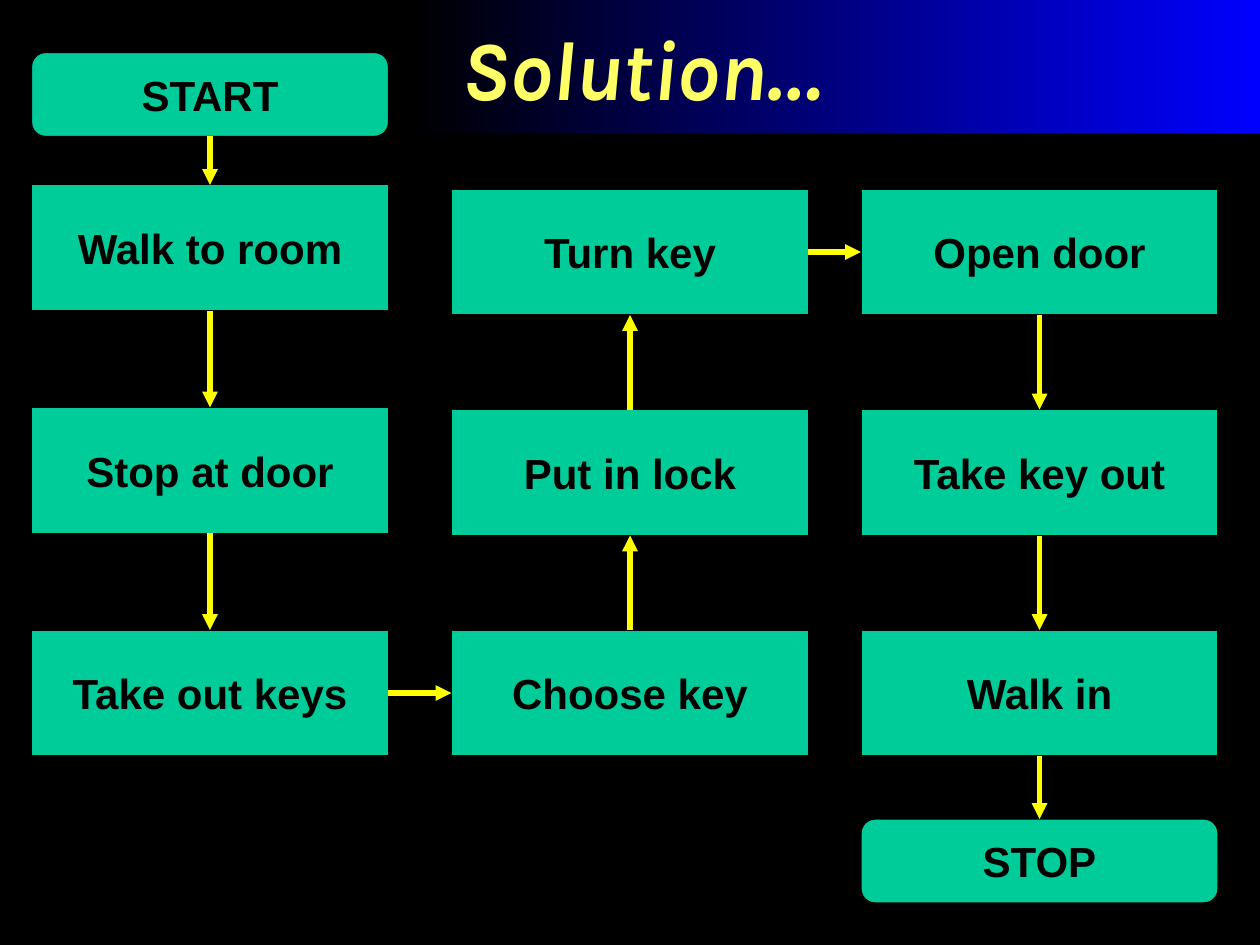
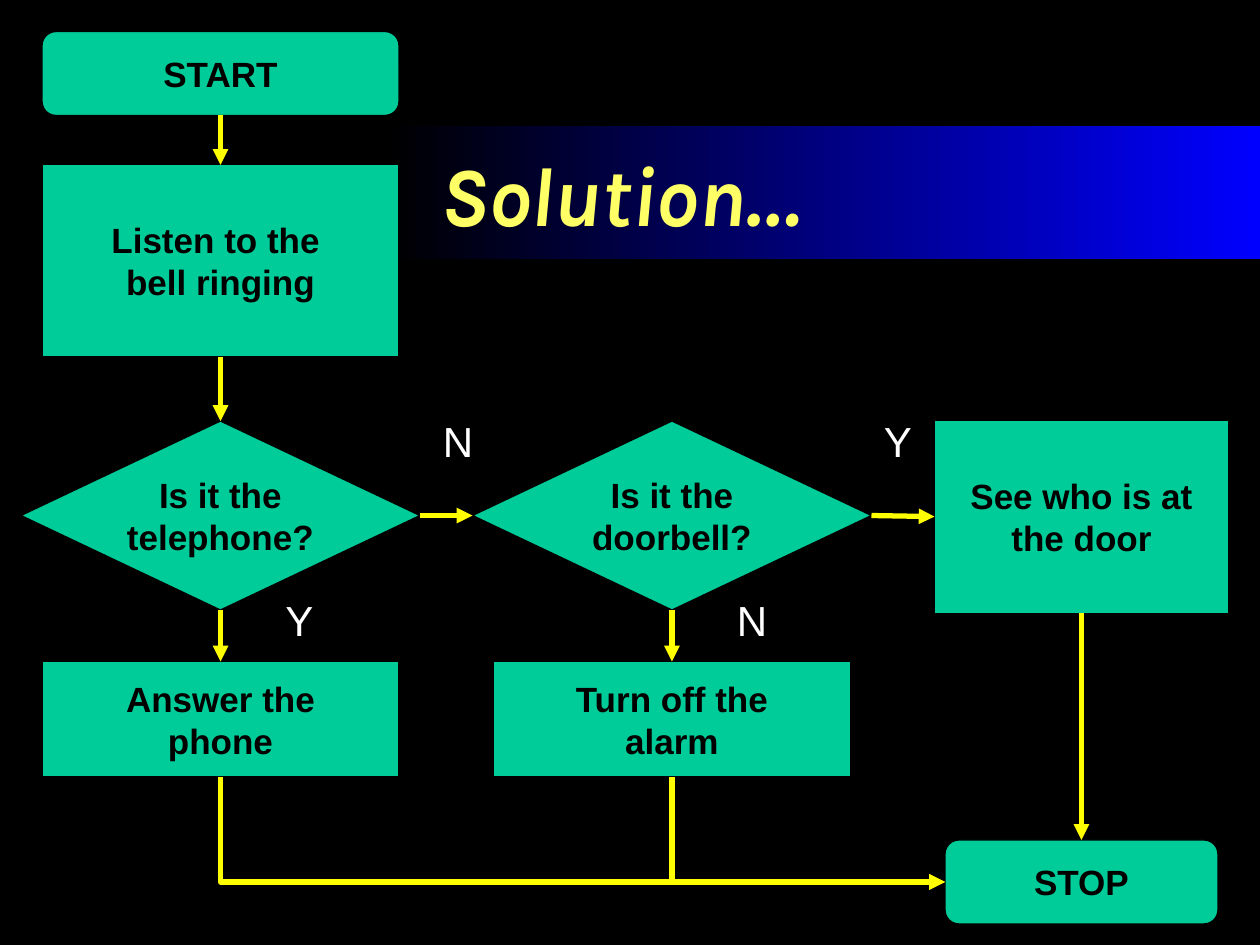
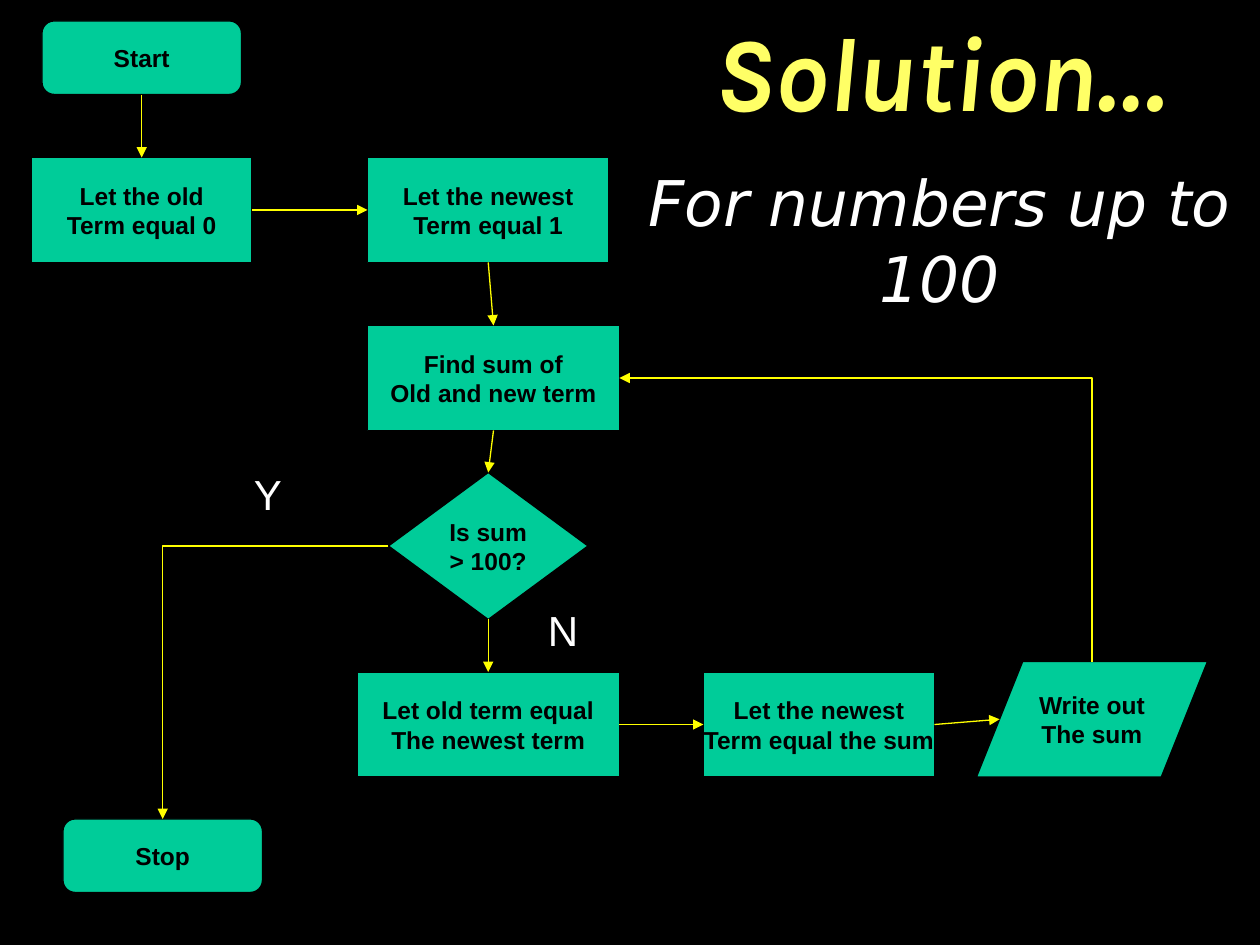
import itertools

import pptx
import pptx.dml.color
import pptx.enum.shapes
import pptx.enum.text
import pptx.oxml
import pptx.oxml.ns
import pptx.util

RGB = pptx.dml.color.RGBColor
BLACK = RGB(0x00, 0x00, 0x00)
WHITE = RGB(0xFF, 0xFF, 0xFF)
BLUE = RGB(0x00, 0x00, 0xFF)
GREEN = RGB(0x00, 0xCC, 0x99)
YELLOW = RGB(0xFF, 0xFF, 0x00)
CREAM = RGB(0xFF, 0xFF, 0x66)

COLS, ROWS = 120, 90
TOP, LEFT, BOTTOM, RIGHT = range(4)

Pt, Inches = pptx.util.Pt, pptx.util.Inches
SHAPE = pptx.enum.shapes.MSO_SHAPE
LINE = pptx.enum.shapes.MSO_CONNECTOR
ALIGN = pptx.enum.text.PP_ALIGN
ANCHOR = pptx.enum.text.MSO_ANCHOR

CAP = SHAPE.FLOWCHART_ALTERNATE_PROCESS
STEP = SHAPE.FLOWCHART_PROCESS
TEST = SHAPE.FLOWCHART_DECISION
DATA = SHAPE.FLOWCHART_DATA

TITLE = {"name": "Karla", "size": Pt(48), "bold": True, "italic": True}
LABEL = {"name": "Arial", "size": Pt(24)}
NODE = {"name": "Arial", "bold": True}
NOTE = {"name": "DejaVu Sans", "size": Pt(36), "bold": False, "italic": True}


def apply(target, values):
    for key, value in values.items():
        setattr(target, key, value)


def style(para, font, color, align):
    para.alignment = align
    apply(para.font, font)
    para.font.color.rgb = color


def place(area, cells):
    """Turn column, row, columns, rows into a box inside the area."""
    left, top, width, height = area
    col, row, cols, rows = cells
    wide, high = width / COLS, height / ROWS
    return [round(n) for n in (left + col * wide, top + row * high,
                               cols * wide, rows * high)]


def band(slide, area, cells):
    shape = slide.shapes.add_shape(SHAPE.RECTANGLE, *place(area, cells))
    shape.shadow.inherit = False
    shape.line.fill.background()
    shape.fill.gradient()
    shape.fill.gradient_angle = 0
    for stop, color in zip(shape.fill.gradient_stops, (BLACK, BLUE)):
        stop.color.rgb = color
    frame = shape.text_frame
    apply(frame, {"text": "Solution…", "word_wrap": True,
                  "vertical_anchor": ANCHOR.TOP,
                  "margin_left": Inches(0.41), "margin_right": Inches(0.14),
                  "margin_top": Inches(0.13), "margin_bottom": Inches(0.13)})
    style(frame.paragraphs[0], TITLE, CREAM, ALIGN.LEFT)


def text(slide, area, cells, words):
    frame = slide.shapes.add_textbox(*place(area, cells)).text_frame
    apply(frame, {"text": words, "word_wrap": True})
    return frame.paragraphs


def label(slide, area, col, row, cols, word):
    para, = text(slide, area, (col, row, cols, 6), word)
    style(para, LABEL, WHITE, ALIGN.LEFT)


def node(slide, area, size, kind, cells, words):
    shape = slide.shapes.add_shape(kind, *place(area, cells))
    shape.shadow.inherit = False
    shape.fill.solid()
    shape.fill.fore_color.rgb = GREEN
    shape.line.color.rgb = BLACK
    shape.line.width = Pt(0.75)
    frame = shape.text_frame
    apply(frame, {"text": words, "word_wrap": False,
                  "vertical_anchor": ANCHOR.MIDDLE})
    for para in frame.paragraphs:
        style(para, {**NODE, "size": Pt(size)}, BLACK, ALIGN.CENTER)
    return shape


def middle(shape):
    return shape.left + shape.width // 2, shape.top + shape.height // 2


def spot(shape, side):
    """Point where a line meets one side of a shape."""
    x, y = middle(shape)
    inset = shape.width // 10 if shape.auto_shape_type == DATA else 0
    return {TOP: (x, shape.top),
            LEFT: (shape.left + inset, y),
            BOTTOM: (x, shape.top + shape.height),
            RIGHT: (shape.left + shape.width - inset, y)}[side]


def join(slide, start, stop, weight, kind=LINE.STRAIGHT, end="tailEnd"):
    """Draw an arrow between two (shape, side) pairs."""
    line = slide.shapes.add_connector(kind, *spot(*start), *spot(*stop))
    for (shape, side), glue in ((start, line.begin_connect),
                                (stop, line.end_connect)):
        if shape.auto_shape_type != DATA:
            glue(shape, side)
    line.line.color.rgb = YELLOW
    line.line.width = Pt(weight)
    props = line.element.spPr
    tip = pptx.oxml.parse_xml(
        f'<a:{end} {pptx.oxml.ns.nsdecls("a")} type="triangle"/>')
    props.find(pptx.oxml.ns.qn("a:ln")).append(tip)
    props.append(pptx.oxml.parse_xml(
        f'<a:effectLst {pptx.oxml.ns.nsdecls("a")}/>'))
    return line


def link(slide, a, b, weight):
    """Join the facing sides of two shapes."""
    (ax, ay), (bx, by) = middle(a), middle(b)
    if abs(bx - ax) > abs(by - ay):
        sides = (RIGHT, LEFT) if bx > ax else (LEFT, RIGHT)
    else:
        sides = (BOTTOM, TOP) if by > ay else (TOP, BOTTOM)
    join(slide, (a, sides[0]), (b, sides[1]), weight)


def bend(slide, start, stop, weight):
    """Join with one corner; the path is stored horizontal part first."""
    end = "tailEnd"
    if start[1] in (TOP, BOTTOM):
        start, stop, end = stop, start, "headEnd"
    line = join(slide, start, stop, weight, LINE.ELBOW, end)
    line.element.spPr.find(pptx.oxml.ns.qn("a:prstGeom")).set(
        "prst", "bentConnector2")


def flow(slide, area, size, weight, nodes, chains):
    """Place named nodes and link the names in each chain."""
    made = {name: node(slide, area, size, *parts)
            for name, parts in nodes.items()}
    for chain in chains:
        for a, b in itertools.pairwise(chain.split()):
            link(slide, made[a], made[b], weight)
    return made


def door(slide, area):
    band(slide, area, (39, 0, 81, 12.7))
    columns = (
        (3, (17.6, 38.8, 60), ("Walk to room", "Stop at door", "Take out keys")),
        (43, (60, 39, 18), ("Choose key", "Put in lock", "Turn key")),
        (82, (18, 39, 60), ("Open door", "Take key out", "Walk in")))
    steps = [(STEP, (col, row, 34, 12), words)
             for col, rows, names in columns
             for row, words in zip(rows, names)]
    steps = [(CAP, (3, 5, 34, 8), "START"), *steps,
             (CAP, (82, 78, 34, 8), "STOP")]
    nodes = {f"n{i}": step for i, step in enumerate(steps)}
    flow(slide, area, 24, 3, nodes, [" ".join(nodes)])


def bell(slide, area):
    band(slide, area, (37, 12, 83, 12.7))
    nodes = {
        "start": (CAP, (4, 3, 34, 8), "START"),
        "listen": (STEP, (4, 15.7, 34, 18.3), "Listen to the \vbell ringing"),
        "phone": (TEST, (2, 40.1, 38, 18), "Is it the\vtelephone?"),
        "answer": (STEP, (4, 63, 34, 11), "Answer the\vphone"),
        "ring": (TEST, (45, 40.1, 38, 18), "Is it the\vdoorbell?"),
        "see": (STEP, (89, 40, 28, 18.4), "See who is at\vthe door"),
        "alarm": (STEP, (47, 63, 34, 11), "Turn off the\nalarm"),
        "stop": (CAP, (90, 80, 26, 8), "STOP")}
    made = flow(slide, area, 20, 3, nodes,
                ["start listen phone ring see stop", "phone answer",
                 "ring alarm"])
    for name in ("alarm", "answer"):
        bend(slide, (made[name], BOTTOM), (made["stop"], LEFT), 3)
    for col, row, word in ((41, 39, "N"), (83, 39, "Y"),
                           (26, 56, "Y"), (69, 56, "N")):
        label(slide, area, col, row, 9, word)


def terms(slide, area):
    nodes = {
        "start": (CAP, (4, 2, 19, 7), "Start"),
        "old": (STEP, (3, 15, 21, 10), "Let the old\nTerm equal 0"),
        "new": (STEP, (35, 15, 23, 10), "Let the newest\nTerm equal 1"),
        "sum": (STEP, (35, 31, 24, 10), "Find sum of\nOld and new term"),
        "test": (TEST, (37, 45, 19, 14), "Is sum\n> 100?"),
        "shift": (STEP, (34, 64, 25, 10),
                  "Let old term equal\nThe newest term"),
        "next": (STEP, (67, 64, 22, 10),
                 "Let the newest\nTerm equal the sum"),
        "write": (DATA, (93, 63, 22, 11), "Write out\nThe sum"),
        "stop": (CAP, (6, 78, 19, 7), "Stop")}
    made = flow(slide, area, 14, 0.75, nodes,
                ["start old new sum test shift next write"])
    bend(slide, (made["test"], LEFT), (made["stop"], TOP), 0.75)
    bend(slide, (made["write"], TOP), (made["sum"], RIGHT), 0.75)
    label(slide, area, 23, 44, 13, "Y")
    label(slide, area, 51, 57, 13, "N")
    head, note = text(slide, area, (59, 0, 61, 31.2),
                      "Solution…\nFor numbers up to 100")
    style(head, {**TITLE, "size": Pt(60)}, CREAM, ALIGN.CENTER)
    style(note, NOTE, WHITE, ALIGN.CENTER)
    note.space_before = Pt(18)


def main():
    deck = pptx.Presentation()
    deck.slide_width, deck.slide_height = Inches(10), Inches(7.5)
    area = (0, 0, deck.slide_width, deck.slide_height)
    for draw in (door, bell, terms):
        slide = deck.slides.add_slide(deck.slide_layouts[6])
        slide.background.fill.solid()
        slide.background.fill.fore_color.rgb = BLACK
        draw(slide, area)
    deck.save("out.pptx")


if __name__ == "__main__":
    main()
